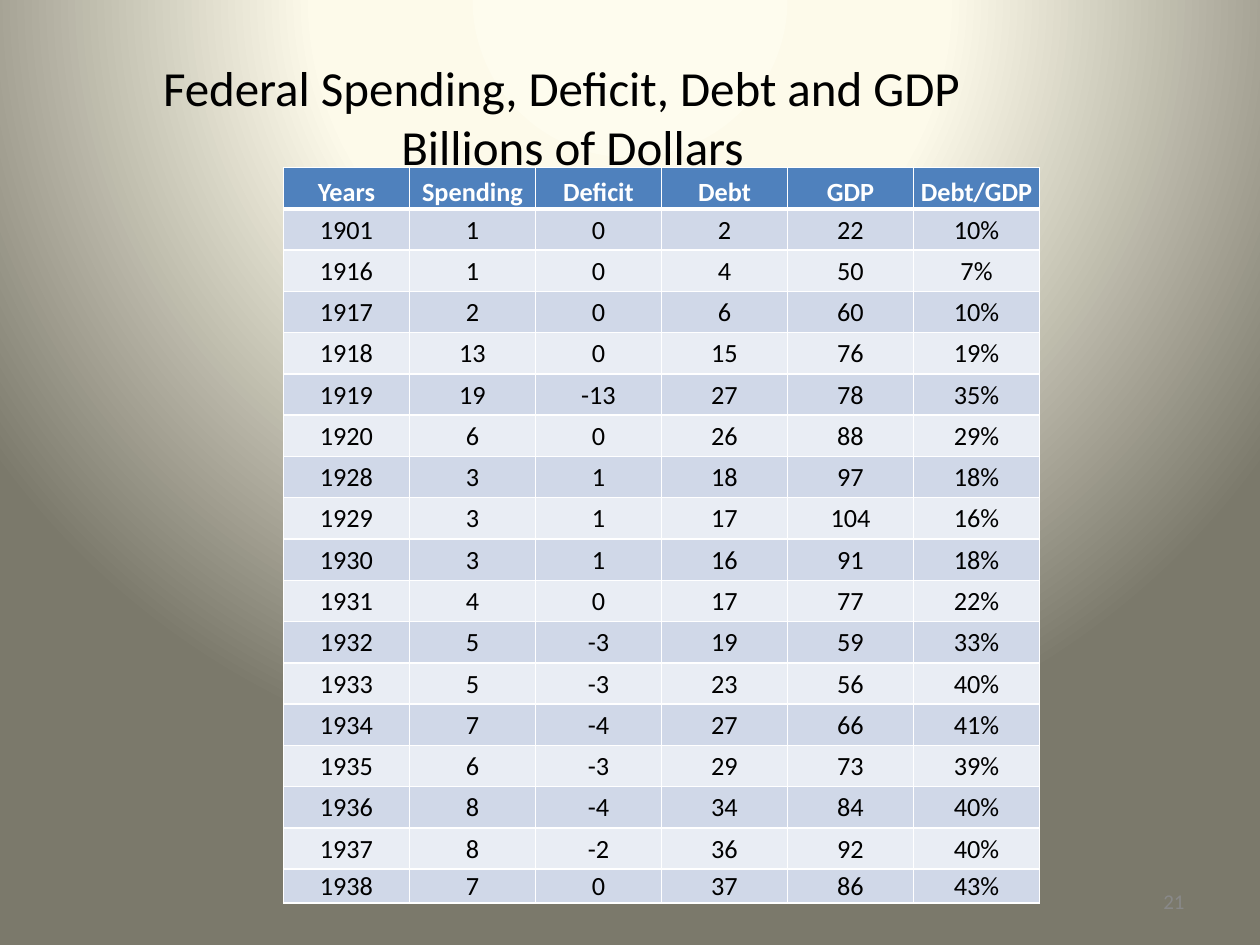
from pptx import Presentation
from pptx.dml.color import RGBColor
from pptx.enum.text import MSO_ANCHOR, PP_ALIGN
from pptx.oxml import parse_xml
from pptx.oxml.ns import nsdecls
from pptx.util import Inches, Pt

BLACK = RGBColor(0x00, 0x00, 0x00)
WHITE = RGBColor(0xFF, 0xFF, 0xFF)
GRAY = RGBColor(0x89, 0x89, 0x89)
HEADER_BLUE = RGBColor(0x4F, 0x81, 0xBD)
BAND_DARK = RGBColor(0xD0, 0xD8, 0xE8)
BAND_LIGHT = RGBColor(0xE9, 0xED, 0xF4)
GLOW = RGBColor(0xFE, 0xFC, 0xEE)
CREAM = RGBColor(0xFD, 0xFA, 0xEA)
OLIVE = RGBColor(0x7B, 0x79, 0x6B)

HEADERS = ["Years", "Spending", "Deficit", "Debt", "GDP", "Debt/GDP"]
BUDGET = [
    (1901, 1, 0, 2, 22, "10%"),
    (1916, 1, 0, 4, 50, "7%"),
    (1917, 2, 0, 6, 60, "10%"),
    (1918, 13, 0, 15, 76, "19%"),
    (1919, 19, -13, 27, 78, "35%"),
    (1920, 6, 0, 26, 88, "29%"),
    (1928, 3, 1, 18, 97, "18%"),
    (1929, 3, 1, 17, 104, "16%"),
    (1930, 3, 1, 16, 91, "18%"),
    (1931, 4, 0, 17, 77, "22%"),
    (1932, 5, -3, 19, 59, "33%"),
    (1933, 5, -3, 23, 56, "40%"),
    (1934, 7, -4, 27, 66, "41%"),
    (1935, 6, -3, 29, 73, "39%"),
    (1936, 8, -4, 34, 84, "40%"),
    (1937, 8, -2, 36, 92, "40%"),
    (1938, 7, 0, 37, 86, "43%"),
]


class SlideBuilder:
    font_name = "Calibri"
    table_size = 15
    last_row_height = 0.27

    def __init__(self, slide):
        self.slide = slide

    def background(self, stops):
        """Circular gradient centred above the slide."""
        stop_xml = "".join(
            f'<a:gs pos="{position * 1000}"><a:srgbClr val="{color}"/></a:gs>'
            for position, color in stops
        )
        background = parse_xml(
            f'<p:bg {nsdecls("p", "a")}><p:bgPr><a:gradFill rotWithShape="1">'
            f'<a:gsLst>{stop_xml}</a:gsLst><a:path path="circle">'
            '<a:fillToRect l="50000" t="-80000" r="50000" b="180000"/>'
            '</a:path></a:gradFill><a:effectLst/></p:bgPr></p:bg>'
        )
        self.slide.element.cSld.insert(0, background)

    def add_run(self, paragraph, text, size, color, bold=False):
        run = paragraph.add_run()
        run.text = text
        run.font.name = self.font_name
        run.font.size = Pt(size)
        run.font.color.rgb = color
        run.font.bold = bold

    def text(self, left, top, width, height, lines, size, color, align):
        shape = self.slide.shapes.add_textbox(
            Inches(left), Inches(top), Inches(width), Inches(height)
        )
        frame = shape.text_frame
        frame.word_wrap = True
        frame.vertical_anchor = MSO_ANCHOR.MIDDLE
        paragraph = frame.paragraphs[0]
        paragraph.alignment = align
        for index, line in enumerate(lines):
            if index:
                paragraph.add_line_break()
            self.add_run(paragraph, line, size, color)

    def cell(self, cell, text, fill, color, is_header):
        cell.fill.solid()
        cell.fill.fore_color.rgb = fill
        cell.margin_left = cell.margin_right = cell.margin_top = Inches(0.01)
        cell.margin_bottom = 0
        cell.vertical_anchor = MSO_ANCHOR.BOTTOM if is_header else MSO_ANCHOR.MIDDLE
        paragraph = cell.text_frame.paragraphs[0]
        paragraph.alignment = PP_ALIGN.CENTER
        self.add_run(paragraph, text, self.table_size, color, is_header)
        self.borders(cell, 3 if is_header else 1)

    def borders(self, cell, bottom_width):
        properties = cell._tc.get_or_add_tcPr()
        widths = {"lnL": 1, "lnR": 1, "lnT": 1, "lnB": bottom_width}
        for index, (side, width) in enumerate(widths.items()):
            border = parse_xml(
                f'<a:{side} {nsdecls("a")} w="{Pt(width)}"><a:solidFill>'
                f'<a:srgbClr val="{WHITE}"/></a:solidFill></a:{side}>'
            )
            properties.insert(index, border)

    def table(self, left, top, width, height, headers, records):
        rows = [headers, *records]
        table = self.slide.shapes.add_table(
            len(rows), len(headers),
            Inches(left), Inches(top), Inches(width), Inches(height),
        ).table
        row_height = (height - self.last_row_height) / len(records)
        for row in table.rows:
            row.height = Inches(row_height)
        table.rows[len(records)].height = Inches(self.last_row_height)
        for row_index, values in enumerate(rows):
            is_header = row_index == 0
            band = BAND_DARK if row_index % 2 else BAND_LIGHT
            fill = HEADER_BLUE if is_header else band
            color = WHITE if is_header else BLACK
            for column_index, value in enumerate(values):
                self.cell(table.cell(row_index, column_index),
                          str(value), fill, color, is_header)


def main():
    presentation = Presentation()
    presentation.slide_width = Inches(10)
    presentation.slide_height = Inches(7.5)
    builder = SlideBuilder(presentation.slides.add_slide(presentation.slide_layouts[6]))

    # Background
    builder.background([(0, GLOW), (40, CREAM), (100, OLIVE)])

    # Title
    builder.text(0, 0.3, 9, 1.25,
                 ["Federal Spending, Deficit, Debt and GDP ", " Billions of Dollars"],
                 28, BLACK, PP_ALIGN.CENTER)

    # Budget table
    builder.table(2.25, 1.33, 6, 5.84, HEADERS, BUDGET)

    # Slide number
    builder.text(7.17, 6.95, 2.33, 0.4, ["21"], 12, GRAY, PP_ALIGN.RIGHT)

    presentation.save("out.pptx")


if __name__ == "__main__":
    main()
